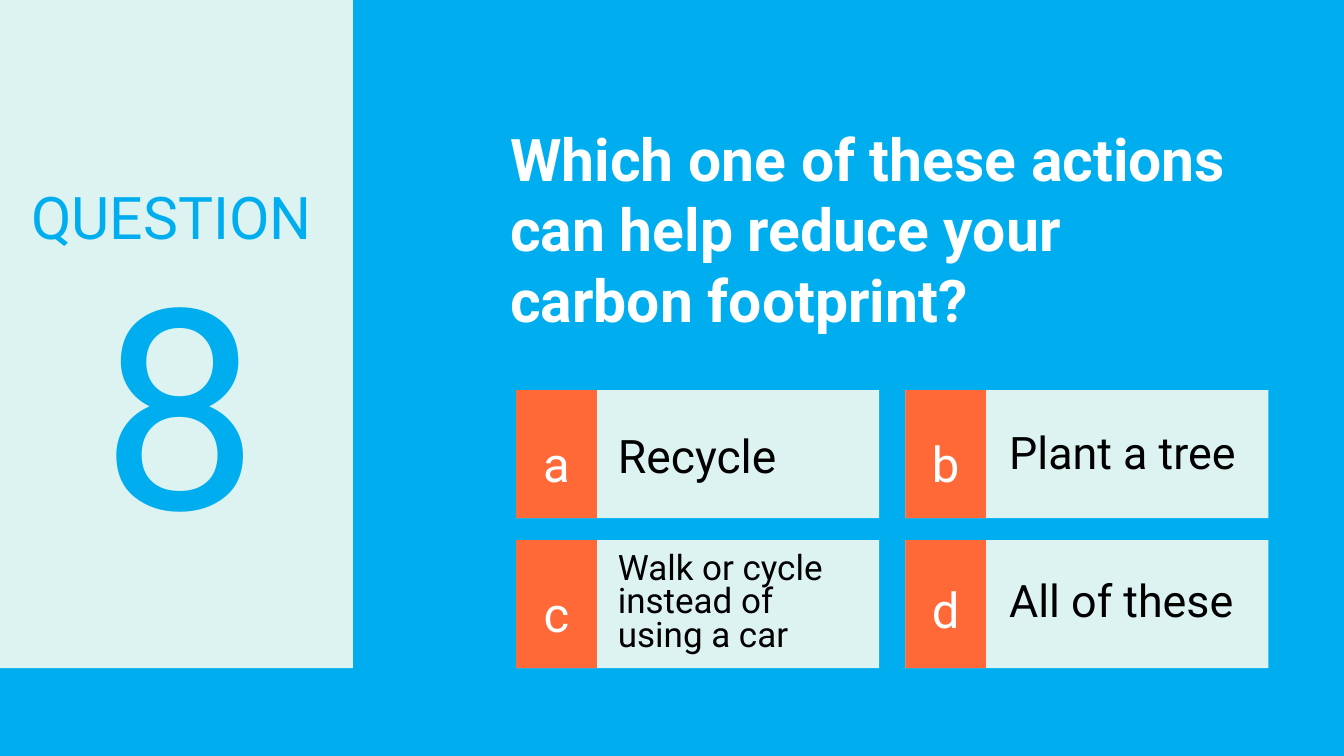
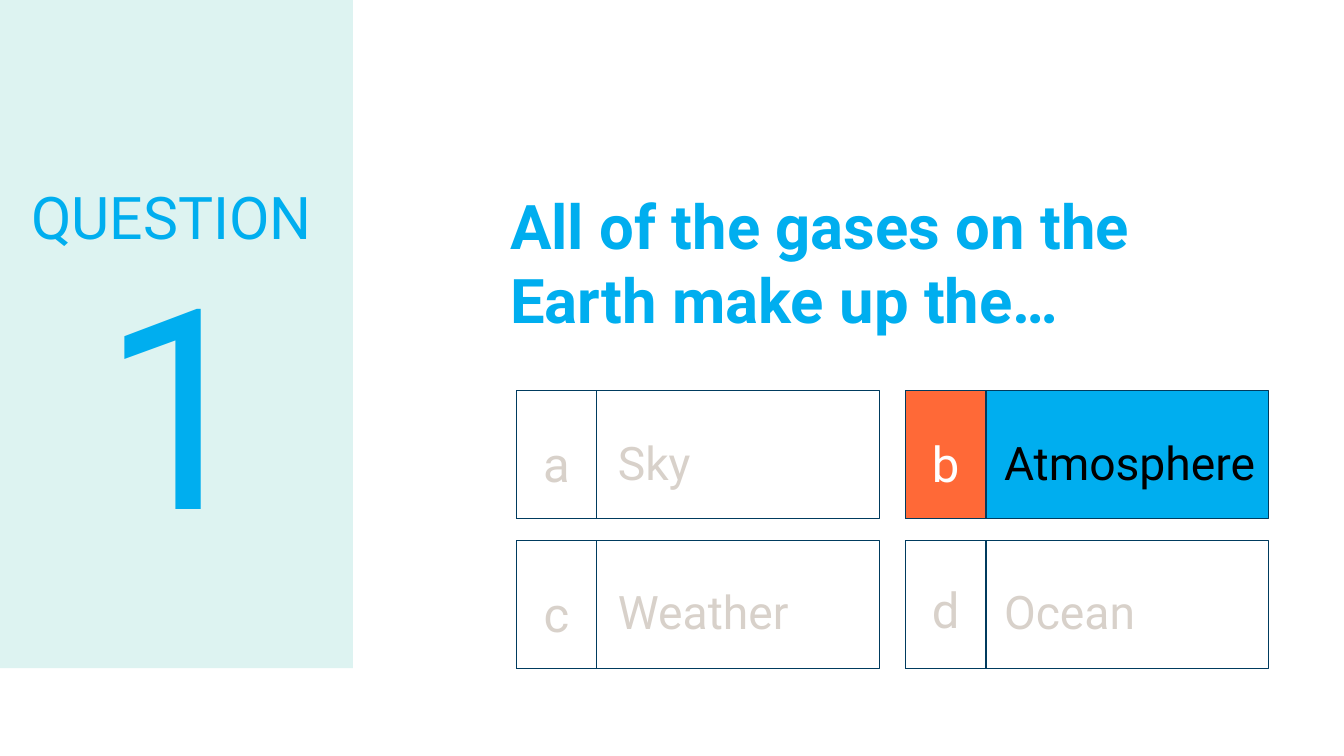
from dataclasses import dataclass

from pptx import Presentation
from pptx.dml.color import RGBColor
from pptx.enum.shapes import MSO_SHAPE
from pptx.enum.text import MSO_ANCHOR, PP_ALIGN
from pptx.util import Inches, Pt

RECT = MSO_SHAPE.RECTANGLE
TOP, MIDDLE = MSO_ANCHOR.TOP, MSO_ANCHOR.MIDDLE
LEFT, CENTER = PP_ALIGN.LEFT, PP_ALIGN.CENTER


@dataclass(frozen=True)
class Theme:
    font: str = "Roboto"
    blue: str = "00AEEF"
    mint: str = "DDF3F1"
    orange: str = "FF6937"
    navy: str = "003B5E"
    grey: str = "D8D1CA"
    white: str = "FFFFFF"
    black: str = "000000"
    label: int = 42
    number: int = 200
    letter: int = 35


T = Theme()

ASK = {"letter": T.white, "key": T.orange, "text": T.black, "fill": T.mint, "line": None}
RIGHT = {"letter": T.white, "key": T.orange, "text": T.black, "fill": T.blue, "line": T.navy}
WRONG = {"letter": T.grey, "key": None, "text": T.grey, "fill": None, "line": T.navy}

SLIDES = [
    {
        "back": T.blue, "ink": T.white, "number": "8",
        "title": "Which one of these actions can help reduce your carbon footprint?",
        "box": (4.98, 1.08, 7.48, 2.37), "size": 42,
        "answers": [
            ("Recycle", ASK, (0.91, 0.42, 2.61, 0.59), 33, 0.7),
            ("Plant a tree", ASK, (0.93, 0.39, 2.61, 0.58), 32, 0.7),
            ("Walk or cycle instead of using a car", ASK, (0.91, 0.03, 2.52, 1.21), 25, 0.8),
            ("All of these", ASK, (0.93, 0.37, 2.61, 0.58), 32, 0.7),
        ],
    },
    {
        "back": T.white, "ink": T.blue, "number": "1",
        "title": "All of the gases on the Earth make up the…",
        "box": (4.98, 1.75, 7.5, 1.69), "size": 44,
        "answers": [
            ("Sky", WRONG, (0.91, 0.26, 2.61, 0.76), 33, 1.15),
            ("Atmosphere", RIGHT, (0.88, 0.26, 3.1, 0.76), 33, 1.15),
            ("Weather", WRONG, (0.91, 0.24, 2.61, 0.76), 33, 1.15),
            ("Ocean", WRONG, (0.88, 0.24, 2.61, 0.76), 33, 1.15),
        ],
    },
]

GRID = {"x": 5.12, "y": 3.87, "dx": 3.86, "dy": 1.49}
CARD_W, CARD_H, KEY_W = 3.6, 1.27, 0.8
LETTERS = [("a", 0.24), ("b", 0.24), ("c", 0.24), ("d", 0.2)]


def color(code):
    return RGBColor.from_string(code)


def add_rect(slide, box, fill, line=None):
    shape = slide.shapes.add_shape(RECT, *map(Inches, box))
    shape.shadow.inherit = False
    if fill:
        shape.fill.solid()
        shape.fill.fore_color.rgb = color(fill)
    else:
        shape.fill.background()
    if line:
        shape.line.color.rgb = color(line)
        shape.line.width = Pt(0.75)
    else:
        shape.line.fill.background()


def add_text(slide, box, text, size, ink, inset=0.1, align=LEFT,
             anchor=TOP, space=1.0, bold=False):
    frame = slide.shapes.add_textbox(*map(Inches, box)).text_frame
    frame.word_wrap = True
    frame.vertical_anchor = anchor
    frame.margin_left = frame.margin_right = Inches(inset)
    frame.margin_top = frame.margin_bottom = Inches(inset)
    frame.text = text
    para = frame.paragraphs[0]
    para.alignment = align
    para.line_spacing = space
    font = para.runs[0].font
    font.name = T.font
    font.size = Pt(size)
    font.bold = bold
    font.color.rgb = color(ink)


def add_panel(slide, number):
    add_rect(slide, (0, 0, 3.5, 6.63), T.mint)
    style = {"inset": 0.05, "anchor": MIDDLE, "space": 0.9}
    add_text(slide, (0.26, 1.68, 3.34, 1.01), "QUESTION", T.label, T.blue, **style)
    add_text(slide, (0.26, 2.59, 3.05, 3.12), number, T.number, T.blue,
             align=CENTER, **style)


def add_card(slide, index, answer):
    text, look, (left, top, width, height), size, space = answer
    letter, drop = LETTERS[index]
    row, col = divmod(index, 2)
    x = GRID["x"] + col * GRID["dx"]
    y = GRID["y"] + row * GRID["dy"]
    add_rect(slide, (x, y, CARD_W, CARD_H), look["fill"], look["line"])
    add_rect(slide, (x, y, KEY_W, CARD_H), look["key"], look["line"])
    add_text(slide, (x, y + drop, KEY_W, 0.79), letter, T.letter,
             look["letter"], align=CENTER, space=1.15)
    add_text(slide, (x + left, y + top, width, height), text, size,
             look["text"], space=space)


def main():
    deck = Presentation()
    deck.slide_width, deck.slide_height = Inches(13.33), Inches(7.5)
    for data in SLIDES:
        slide = deck.slides.add_slide(deck.slide_layouts[6])
        slide.background.fill.solid()
        slide.background.fill.fore_color.rgb = color(data["back"])
        add_text(slide, data["box"], data["title"], data["size"], data["ink"],
                 inset=0.08, anchor=MIDDLE, bold=True)
        for index, answer in enumerate(data["answers"]):
            add_card(slide, index, answer)
        add_panel(slide, data["number"])
    deck.save("out.pptx")


if __name__ == "__main__":
    main()
